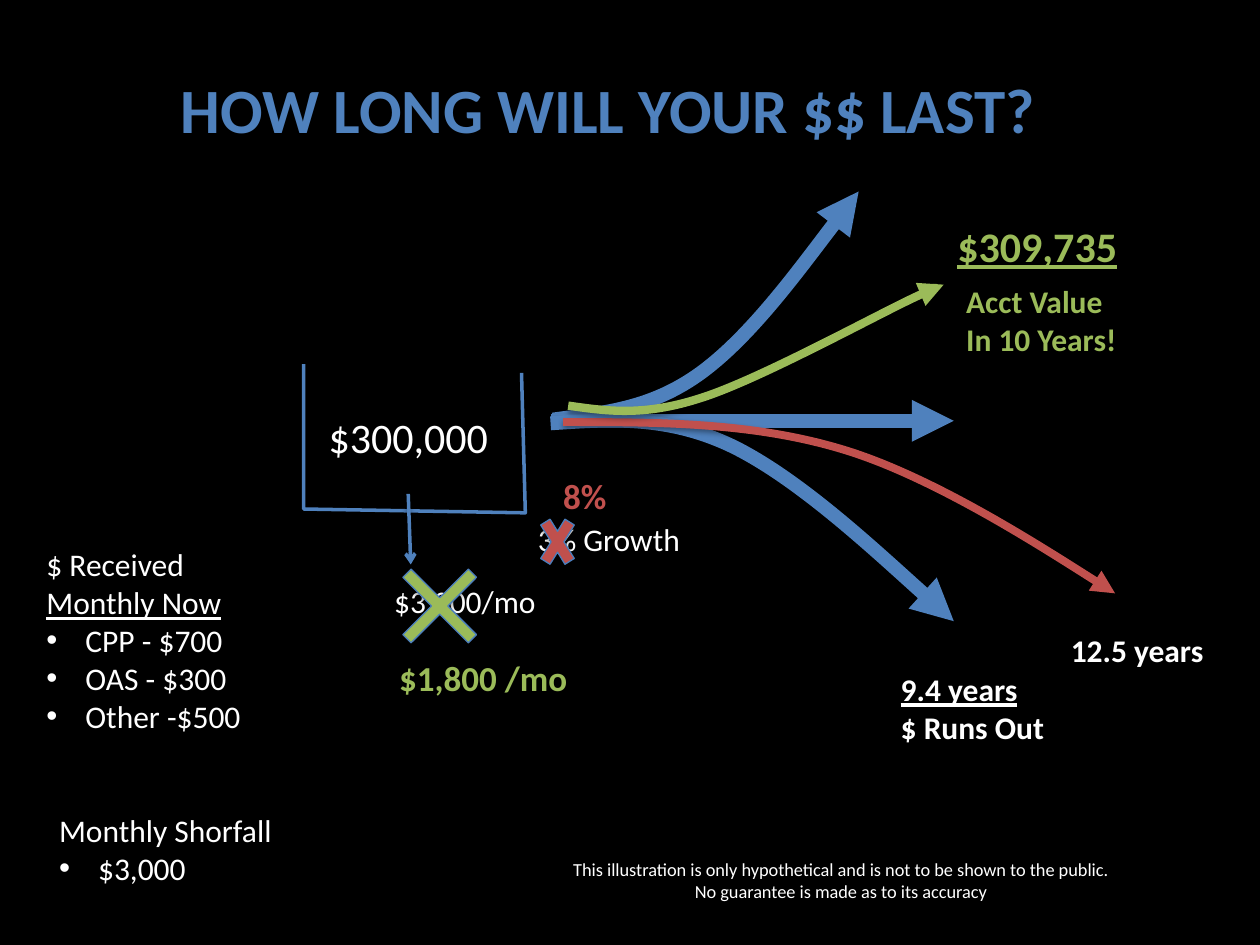
from pptx import Presentation
from pptx.dml.color import RGBColor
from pptx.enum.shapes import MSO_CONNECTOR, MSO_SHAPE
from pptx.enum.text import MSO_AUTO_SIZE, PP_ALIGN
from pptx.oxml.ns import qn
from pptx.util import Inches, Pt
from lxml.etree import SubElement

BLACK = RGBColor(0x00, 0x00, 0x00)
WHITE = RGBColor(0xFF, 0xFF, 0xFF)
BLUE = RGBColor(0x4F, 0x81, 0xBD)
EDGE_BLUE = RGBColor(0x4B, 0x7E, 0xBC)
GREEN = RGBColor(0x9B, 0xBB, 0x59)
RED = RGBColor(0xC0, 0x50, 0x4D)
FONT = "Calibri"
BULLET_INDENT = Inches(0.31)


def add_bullet(para):
    props = para._p.get_or_add_pPr()
    props.set("marL", str(BULLET_INDENT))
    props.set("indent", str(-BULLET_INDENT))
    SubElement(props, qn("a:buFont"), typeface="Arial")
    SubElement(props, qn("a:buChar"), char="•")


def add_text(page, at, lines, size=18, color=WHITE, bold=False, wrap=False,
             align=PP_ALIGN.LEFT):
    """Each line is a list of runs; "•" at its start makes a bullet, "_" underlines a run."""
    box = page.shapes.add_textbox(*map(Inches, at))
    frame = box.text_frame
    frame.word_wrap = wrap
    frame.auto_size = MSO_AUTO_SIZE.SHAPE_TO_FIT_TEXT
    for index, runs in enumerate(lines):
        para = frame.paragraphs[0] if index == 0 else frame.add_paragraph()
        para.alignment = align
        if runs[0] == "•":
            add_bullet(para)
            runs = runs[1:]
        for text in runs:
            span = para.add_run()
            span.text = text.removeprefix("_")
            font = span.font
            font.name, font.size, font.bold = FONT, Pt(size), bold
            font.underline = text.startswith("_")
            font.color.rgb = color


def add_shadow(shape, opacity=38, distance=1.6):
    props = shape._element.spPr
    for old in props.findall(qn("a:effectLst")):
        props.remove(old)
    effects = SubElement(props, qn("a:effectLst"))
    shadow = SubElement(effects, qn("a:outerShdw"), blurRad=str(Pt(3.1)),
                        dist=str(Pt(distance)), dir="5400000", rotWithShape="0")
    tint = SubElement(shadow, qn("a:srgbClr"), val=str(BLACK))
    SubElement(tint, qn("a:alpha"), val=str(opacity * 1000))


def style_line(shape, color, width, arrowhead=None):
    shape.line.color.rgb = color
    shape.line.width = Pt(width)
    if arrowhead:
        SubElement(shape.line._get_or_add_ln(), qn("a:tailEnd"), type=arrowhead)
    add_shadow(shape)


def add_outline(page, points, color, width, arrowhead=None):
    start, *rest = [(Inches(x), Inches(y)) for x, y in points]
    builder = page.shapes.build_freeform(*start)
    builder.add_line_segments(rest, close=False)
    outline = builder.convert_to_shape()
    outline.fill.background()
    style_line(outline, color, width, arrowhead)
    return outline


def add_curve(page, points, color, width, rotation=0):
    """Arrow along Bézier arcs: after the start, two controls and an end for each."""
    curve = add_outline(page, points, color, width, "triangle")
    curve.rotation = rotation
    path_element = next(curve._element.spPr.iter(qn("a:path")))
    segments = path_element.findall(qn("a:lnTo"))
    for first in range(0, len(segments), 3):
        arc = SubElement(path_element, qn("a:cubicBezTo"))
        for segment in segments[first:first + 3]:
            arc.append(segment[0])
            path_element.remove(segment)


def add_arrow(page, start, end, width, arrowhead):
    arrow = page.shapes.add_connector(
        MSO_CONNECTOR.STRAIGHT, *map(Inches, start + end))
    style_line(arrow, BLUE, width, arrowhead)


def add_cross(page, at, color, thickness=None):
    cross = page.shapes.add_shape(MSO_SHAPE.MATH_MULTIPLY, *map(Inches, at))
    if thickness:
        cross.adjustments[0] = thickness
    cross.fill.solid()
    cross.fill.fore_color.rgb = color
    style_line(cross, EDGE_BLUE, 0.75)
    add_shadow(cross, opacity=35, distance=1.8)


def main():
    deck = Presentation()
    deck.slide_width, deck.slide_height = Inches(10), Inches(7.5)
    page = deck.slides.add_slide(deck.slide_layouts[6])
    page.background.fill.solid()
    page.background.fill.fore_color.rgb = BLACK

    add_text(page, (1.28, 0.51, 7.09, 0.71), [["HOW LONG WILL YOUR $$ LAST?"]],
             size=36, color=BLUE, bold=True, align=PP_ALIGN.CENTER)

    # Savings bucket and growth rate
    add_outline(page, [(2.41, 2.89), (2.41, 4.04), (4.17, 4.07), (4.14, 2.96)], BLUE, 2)
    add_text(page, (2.51, 3.22, 1.48, 0.5), [["$300,000"]], size=24)
    add_text(page, (4.17, 4.08, 1.35, 0.4), [["3% Growth"]])

    # Rising, level and falling balance
    add_curve(page, [(4.26, 3.12), (4.65, 3.13), (5.04, 3.17), (5.49, 2.94),
                     (5.94, 2.71), (6.95, 1.73), (6.95, 1.73)], BLUE, 8, rotation=350.6)
    add_arrow(page, (4.37, 3.34), (7.57, 3.34), 8, "triangle")
    add_curve(page, [(4.37, 3.36), (4.83, 3.33), (5.3, 3.29), (5.83, 3.55),
                     (6.37, 3.82), (7.57, 4.93), (7.57, 4.93)], BLUE, 8)
    add_arrow(page, (3.24, 3.92), (3.26, 4.48), 2, "arrow")

    # Income, shortfall and withdrawal
    add_text(page, (0.27, 4.28, 1.84, 1.62),
             [["$ Received ", "_Monthly Now"], ["•", "CPP - $700"],
              ["•", "OAS - $300"], ["•", "Other -$500"]], wrap=True)
    add_text(page, (0.37, 6.39, 1.91, 0.71), [["Monthly Shorfall"], ["•", "$3,000"]])
    add_text(page, (3.03, 4.57, 1.34, 0.4), [["$3,000/mo"]])
    add_text(page, (7.05, 5.27, 1.35, 0.71), [["_9.4 years"], ["$ Runs Out"]], bold=True)

    # Higher growth
    add_cross(page, (4.24, 4, 0.37, 0.6), RED)
    add_text(page, (4.37, 3.72, 0.55, 0.44), [["8%"]], size=20, color=RED, bold=True)
    add_curve(page, [(4.47, 3.35), (5.23, 3.35), (6, 3.35), (6.73, 3.58),
                     (7.46, 3.81), (8.85, 4.71), (8.85, 4.71)], RED, 4.5)
    add_text(page, (8.4, 4.96, 1.27, 0.4), [["12.5 years"]], bold=True)

    # Smaller withdrawal
    add_cross(page, (2.99, 4.31, 1, 1), GREEN, thickness=0.092)
    add_text(page, (3.07, 5.16, 1.55, 0.44), [["$1,800 /mo"]],
             size=20, color=GREEN, bold=True)
    add_curve(page, [(4.51, 3.22), (4.8, 3.26), (5.1, 3.31), (5.56, 3.16),
                     (6.01, 3.02), (6.94, 2.51), (7.26, 2.36),
                     (7.58, 2.21), (7.49, 2.26), (7.49, 2.26)], GREEN, 4.75)
    add_text(page, (7.57, 2.19, 1.43, 0.71), [["Acct Value"], ["In 10 Years!"]],
             color=GREEN, bold=True)
    add_text(page, (7.5, 1.7, 1.48, 0.5), [["_$309,735"]],
             size=24, color=GREEN, bold=True)

    add_text(page, (4.37, 6.76, 4.61, 0.45),
             [["This illustration is only hypothetical and is not to be shown to the public."],
              ["No guarantee is made as to its accuracy"]],
             size=10.5, align=PP_ALIGN.CENTER)
    deck.save("out.pptx")


if __name__ == "__main__":
    main()
